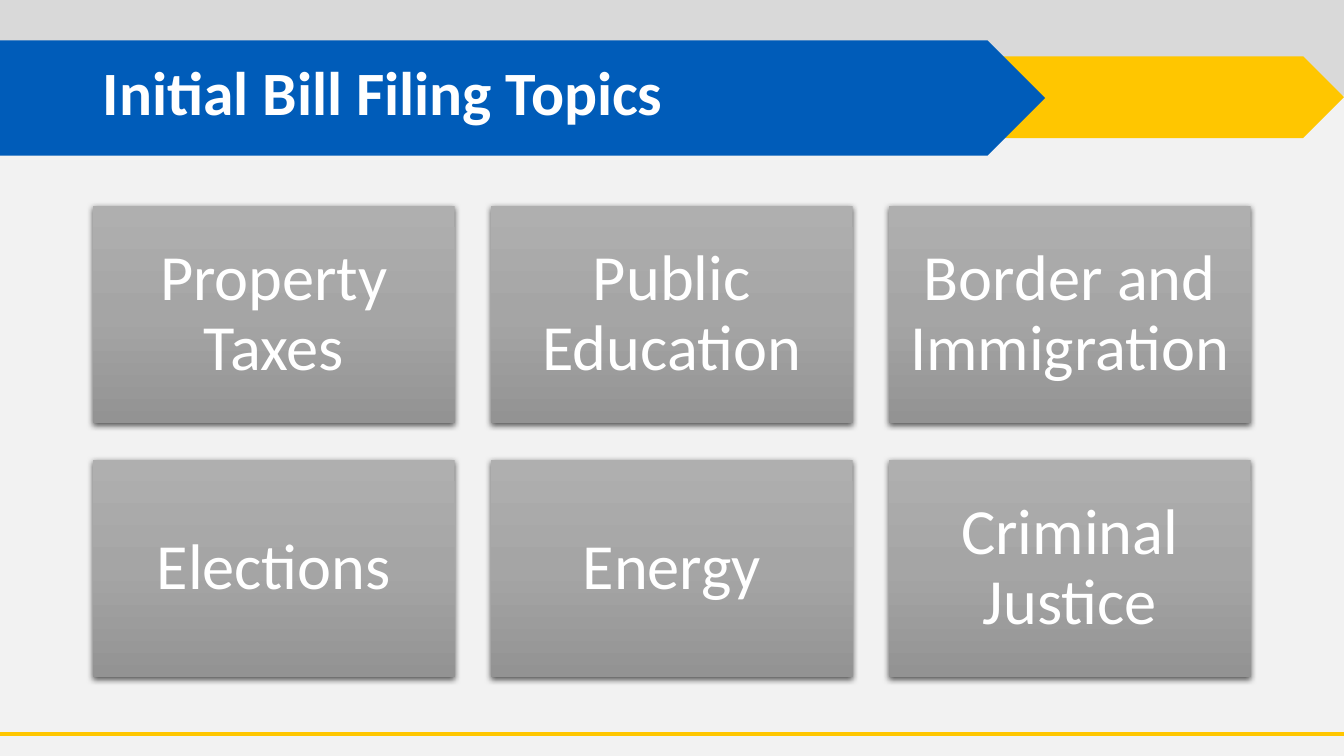
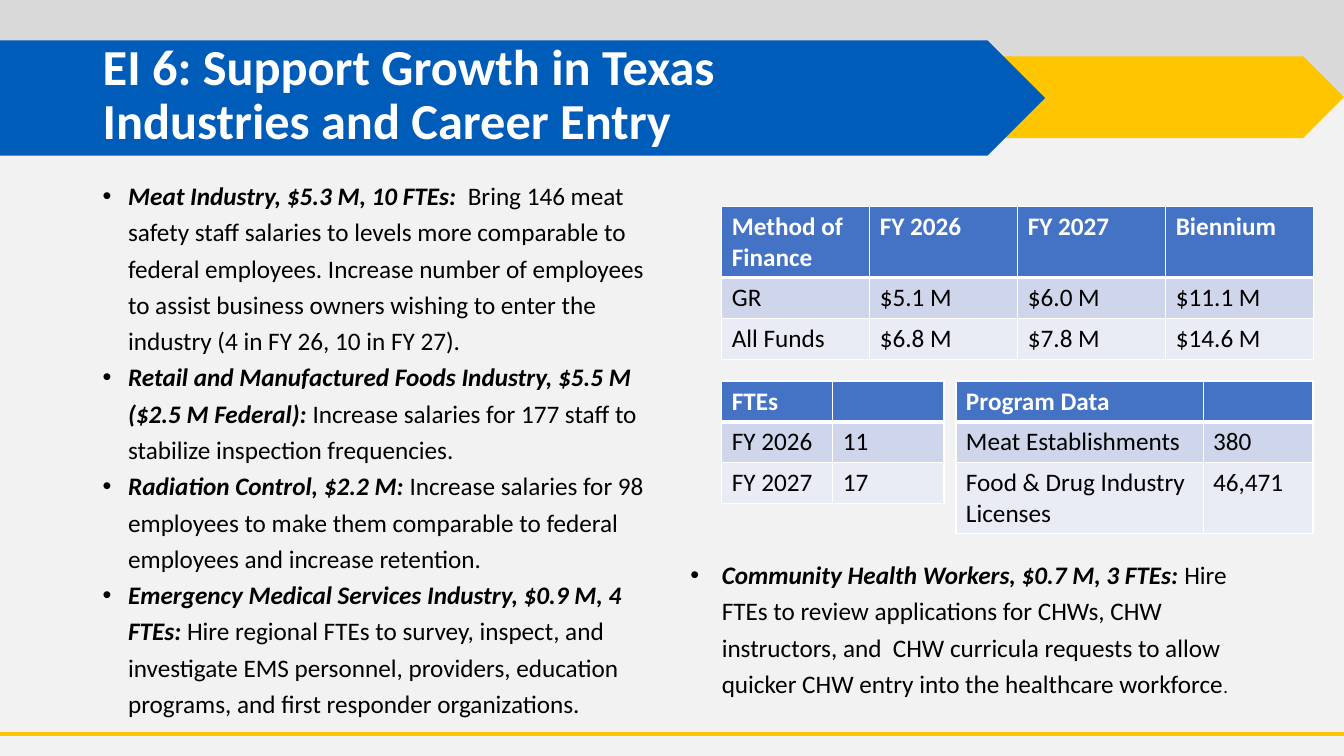
from copy import deepcopy

from lxml.etree import SubElement
from pptx import Presentation
from pptx.dml.color import RGBColor
from pptx.enum.shapes import MSO_CONNECTOR as Line, MSO_SHAPE as Shape
from pptx.enum.text import MSO_ANCHOR as Anchor, PP_ALIGN as Align
from pptx.oxml.ns import qn
from pptx.util import Cm, Pt

# Colours and font
FONT = "Calibri"
WHITE = RGBColor(0xFF, 0xFF, 0xFF)
BLACK = RGBColor(0, 0, 0)
PAPER = RGBColor(0xF2, 0xF2, 0xF2)
SILVER = RGBColor(0xD9, 0xD9, 0xD9)
GOLD = RGBColor(0xFF, 0xC6, 0x00)
BLUE = RGBColor(0x00, 0x5C, 0xB9)
HEAD = RGBColor(0x44, 0x72, 0xC4)
ROWS = [RGBColor(0xCF, 0xD5, 0xEA), RGBColor(0xE9, 0xEB, 0xF5)]
FADE = [(0, RGBColor(0xAF, 0xAF, 0xAF)), (0.5, RGBColor(0xA5, 0xA5, 0xA5)),
        (1, RGBColor(0x93, 0x93, 0x93))]

# Content
WIDE, HIGH = 33.87, 19.05
LEFT = 2.34
BANDS = [  # shape, colour, (left, top, width, height)
    (Shape.RECTANGLE, SILVER, (0, 0, WIDE, 2.41)),
    (Shape.PENTAGON, GOLD, (18, 1.42, 15.87, 2.06)),
    (Shape.PENTAGON, BLUE, (0, 1.02, 26.34, 2.9)),
]
TOPICS = ["Property Taxes", "Public Education", "Border and Immigration",
          "Elections", "Energy", "Criminal Justice"]
ITEMS = [  # bold lead, plain rest
    ("Meat Industry, $5.3 M, 10 FTEs: ",
     " Bring 146 meat safety staff salaries to levels more comparable to federal "
     "employees. Increase number of employees to assist business owners wishing to "
     "enter the industry (4 in FY 26, 10 in FY 27)."),
    ("Retail and Manufactured Foods Industry, $5.5 M ($2.5 M Federal): ",
     "Increase salaries for 177 staff to stabilize inspection frequencies."),
    ("Radiation Control, $2.2 M:",
     " Increase salaries for 98 employees to make them comparable to federal "
     "employees and increase retention."),
    ("Emergency Medical Services Industry, $0.9 M, 4 FTEs: ",
     "Hire regional FTEs to survey, inspect, and investigate EMS personnel, "
     "providers, education programs, and first responder organizations."),
]
HEALTH = [
    ("Community Health Workers, $0.7 M, 3 FTEs: ",
     "Hire FTEs to review applications for CHWs, CHW instructors, and  CHW curricula "
     "requests to allow quicker CHW entry into the healthcare workforce", "."),
]
ONE, TWO = 1.03, 1.78  # heights of rows with one and two lines
TABLES = [  # (left, top), column widths, row heights, cells
    ((18.19, 5.21), [3.73] * 4, [TWO, ONE, ONE],
     [["Method of Finance", "FY 2026", "FY 2027", "Biennium"],
      ["GR", "$5.1 M", "$6.0 M", "$11.1 M"],
      ["All Funds", "$6.8 M", "$7.8 M", "$14.6 M"]]),
    ((18.19, 9.6), [2.8] * 2, [ONE] * 3,
     [["FTEs", ""], ["FY 2026", "11"], ["FY 2027", "17"]]),
    ((24.09, 9.6), [6.23, 2.77], [ONE, ONE, TWO],
     [["Program Data", ""], ["Meat Establishments", "380"],
      ["Food & Drug Industry Licenses", "46,471"]]),
]


def style(run, size, color, bold=False, slant=False):
    font = run.font
    font.name, font.size, font.bold, font.italic = FONT, Pt(size), bold, slant
    font.color.rgb = color


def add_box(slide, box):
    frame = slide.shapes.add_textbox(*map(Cm, box)).text_frame
    frame.word_wrap = True
    return frame


def add_shape(slide, kind, box):
    shape = slide.shapes.add_shape(kind, *map(Cm, box))
    shape.shadow.inherit = False
    shape.line.fill.background()
    return shape


def add_slide(deck, title, size):
    """Start a slide with the shared background, bands, title and foot line."""
    slide = deck.slides.add_slide(deck.slide_layouts[6])
    slide.background.fill.solid()
    slide.background.fill.fore_color.rgb = PAPER
    for kind, color, box in BANDS:
        band = add_shape(slide, kind, box)
        band.fill.solid()
        band.fill.fore_color.rgb = color
    foot = slide.shapes.add_connector(
        Line.STRAIGHT, Cm(0), Cm(18.49), Cm(WIDE), Cm(18.49))
    foot.line.color.rgb = GOLD
    foot.line.width = Pt(3)
    SubElement(foot.element.spPr, qn("a:effectLst"))

    frame = add_box(slide, (LEFT, 0.58, 29.2, 3.68))
    frame.vertical_anchor = Anchor.MIDDLE
    para = frame.paragraphs[0]
    para.text = title
    para.line_spacing = 0.9
    for run in para.runs:
        style(run, size, WHITE, bold=True)
    return slide


def add_tile(slide, text, box):
    tile = add_shape(slide, Shape.RECTANGLE, box)
    # Three-stop fade from top to bottom
    tile.fill.gradient()
    tile.fill.gradient_angle = 270
    stops = tile.element.spPr.find(".//" + qn("a:gsLst"))
    stops.append(deepcopy(stops[0]))
    for stop, (place, color) in zip(tile.fill.gradient_stops, FADE):
        stop.position = place
        stop.color.rgb = color
    # Soft shadow below
    glow = SubElement(tile.element.spPr.find(qn("a:effectLst")), qn("a:outerShdw"),
                      blurRad=str(Pt(4.5)), dist=str(Pt(1.5)), dir="5400000",
                      algn="ctr", rotWithShape="0")
    ink = SubElement(glow, qn("a:srgbClr"), val=str(BLACK))
    SubElement(ink, qn("a:alpha"), val="63000")

    frame = tile.text_frame
    frame.word_wrap = True
    frame.vertical_anchor = Anchor.MIDDLE
    frame.margin_left = frame.margin_right = Cm(0.48)
    frame.margin_top = frame.margin_bottom = Cm(0.48)
    para = frame.paragraphs[0]
    para.text = text
    para.alignment = Align.CENTER
    para.line_spacing = 0.9
    style(para.runs[0], 46, WHITE)


def add_list(slide, items, box, indent):
    frame = add_box(slide, box)
    for i, (lead, *rest) in enumerate(items):
        para = frame.add_paragraph() if i else frame.paragraphs[0]
        props = para._p.get_or_add_pPr()
        props.set("marL", str(Cm(indent)))
        props.set("indent", str(-Cm(indent)))
        SubElement(props, qn("a:buFont"), typeface="Arial")
        SubElement(props, qn("a:buChar"), char="•")
        para.line_spacing = 1.2
        para.text = lead
        style(para.runs[0], 18, BLACK, bold=True, slant=True)
        for text, size in zip(rest, (18, 13)):
            run = para.add_run()
            run.text = text
            style(run, size, BLACK)


def add_edges(cell, row):
    """White cell borders, thick between the head and the body."""
    props = cell._tc.get_or_add_tcPr()
    thick = {"T": row == 1, "B": row == 0}
    for side in "LRTB":
        edge = SubElement(props, qn("a:ln" + side),
                          w=str(Pt(3 if thick.get(side) else 1)))
        fill = SubElement(edge, qn("a:solidFill"))
        SubElement(fill, qn("a:srgbClr"), val=str(WHITE))


def add_table(slide, spot, cols, rows, cells):
    size = (sum(cols), sum(rows))
    table = slide.shapes.add_table(
        len(rows), len(cols), *map(Cm, spot + size)).table
    for col, width in zip(table.columns, cols):
        col.width = Cm(width)
    for r, (height, texts) in enumerate(zip(rows, cells)):
        table.rows[r].height = Cm(height)
        for c, text in enumerate(texts):
            cell = table.cell(r, c)
            add_edges(cell, r)
            cell.fill.solid()
            cell.fill.fore_color.rgb = ROWS[(r - 1) % 2] if r else HEAD
            cell.text_frame.text = text
            for run in cell.text_frame.paragraphs[0].runs:
                style(run, 18, BLACK if r else WHITE, bold=r == 0)


def main():
    deck = Presentation()
    deck.slide_width, deck.slide_height = Cm(WIDE), Cm(HIGH)

    # Topic grid
    slide = add_slide(deck, "Initial Bill Filing Topics", 44)
    width, height, gap, top = 9.12, 5.49, 0.91, 5.18
    for i, topic in enumerate(TOPICS):
        row, col = divmod(i, 3)
        add_tile(slide, topic, (LEFT + col * (width + gap),
                                top + row * (height + gap), width, height))

    # Funding item: list, tables, closing point
    slide = add_slide(
        deck, "EI 6: Support Growth in Texas\vIndustries and Career Entry", 36)
    add_list(slide, ITEMS, (LEFT, 4.27, 14.15, 12.88), 0.64)
    for table in TABLES:
        add_table(slide, *table)
    add_list(slide, HEALTH, (17.15, 13.82, 14.91, 3.89), 0.79)

    deck.save("out.pptx")


if __name__ == "__main__":
    main()
